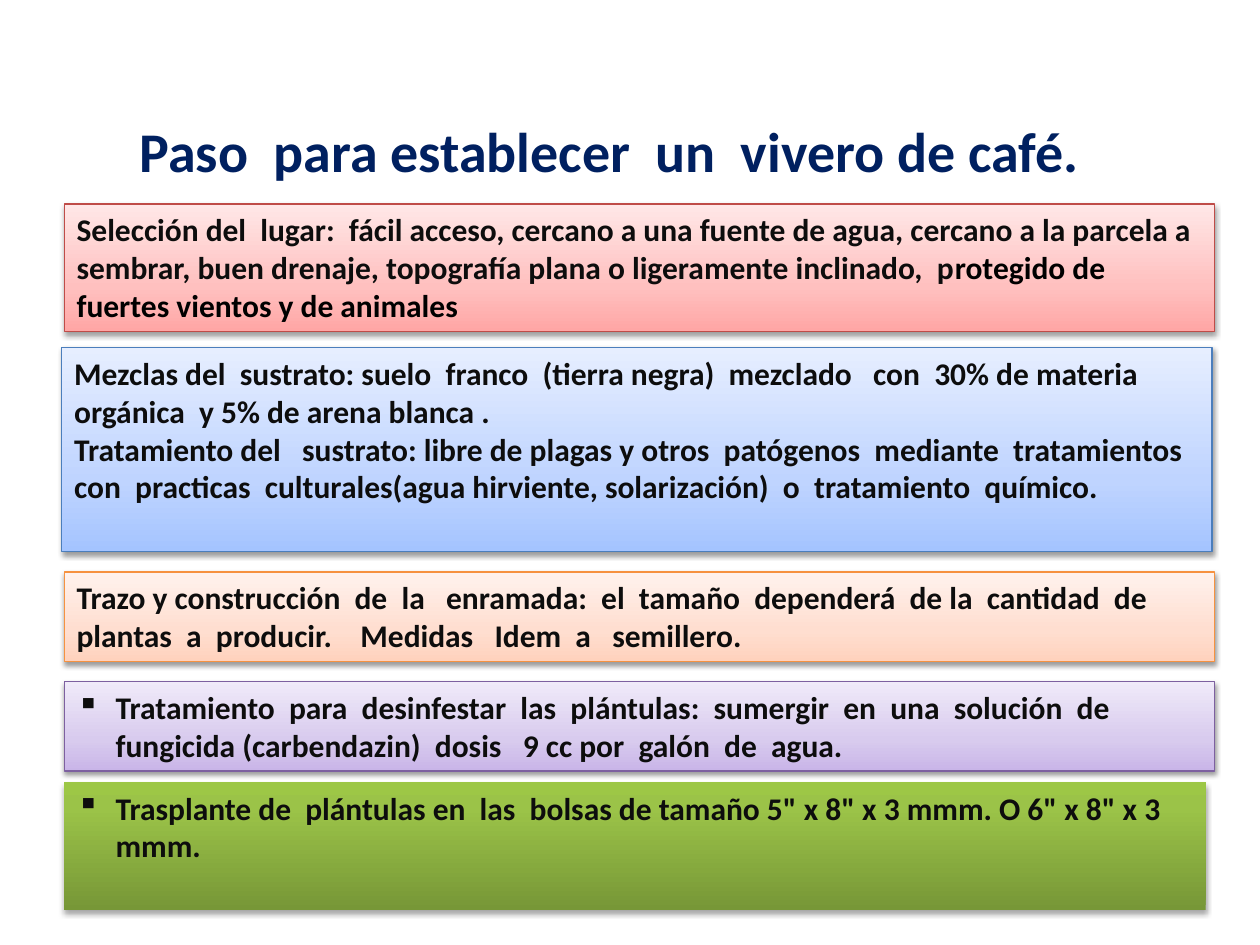
from dataclasses import dataclass

from lxml.etree import SubElement
from pptx import Presentation
from pptx.dml.color import RGBColor
from pptx.enum.shapes import MSO_SHAPE as Preset
from pptx.enum.text import MSO_ANCHOR as Anchor, MSO_AUTO_SIZE as AutoSize, PP_ALIGN as Align
from pptx.oxml.ns import qn
from pptx.util import Emu, Inches, Pt

WIDTH, HEIGHT = Inches(10), Inches(7.5)
COLUMN, ROW = WIDTH / 100, HEIGHT / 75
FONT = "Calibri"
TEXT_COLOUR = "0D0D0D"
INDENT = Inches(0.31)


@dataclass(frozen=True)
class Step:
    top: float
    rows: float
    stops: tuple[tuple[int, str], ...]
    paragraphs: tuple[str, ...]
    border: str = ""
    left: float = 5.1
    columns: float = 91.3
    bulleted: bool = False
    black_ending: str = ""
    shadow_alpha: int = 38
    shadow_distance: float = 1.6


def tint(dark: str, middle: str, light: str) -> tuple[tuple[int, str], ...]:
    return (0, dark), (35, middle), (100, light)


STEPS = (
    Step(16.2, 10.1, tint("FFA6A5", "FFC0BF", "FFE7E7"),
         ("Selección del  lugar:  fácil acceso, cercano a una fuente de agua, cercano a la parcela a "
          "sembrar, buen drenaje, topografía plana o ligeramente inclinado,  p",),
         border="BF4C48", black_ending="rotegido de fuertes vientos y de animales"),
    Step(27.6, 16.2, tint("A4C4FF", "BFD4FF", "E6EEFF"),
         ("Mezclas del  sustrato: suelo  franco  (tierra negra)  mezclado   con  30% de materia  "
          "orgánica  y 5% de arena blanca .",
          "Tratamiento del   sustrato: libre de plagas y otros  patógenos  mediante  tratamientos "
          "con  practicas  culturales(agua hirviente, solarización)  o  tratamiento  químico."),
         border="4B7EBC", left=4.9),
    Step(45.4, 7.1, tint("FFD2BD", "FFDED0", "FFF2ED"),
         ("Trazo y construcción  de  la   enramada:  el  tamaño  dependerá  de la  cantidad  de  "
          "plantas  a  producir.    Medidas   Idem  a   semillero.",),
         border="F69240"),
    Step(54.1, 7.1, tint("C9B5E8", "D8CBEE", "F0EAF9"),
         ("Tratamiento  para  desinfestar  las  plántulas:  sumergir  en  una  solución  de "
          "fungicida (carbendazin)  dosis   9 cc por  galón  de  agua.",),
         border="7D60A0", bulleted=True),
    Step(62.1, 10.1, ((0, "779737"), (80, "9BC348"), (100, "9DC746")),
         ('Trasplante de  plántulas en  las  bolsas de tamaño 5" x 8" x 3 mmm. O 6" x 8" x 3 mmm.',),
         columns=90.6, bulleted=True, shadow_alpha=35, shadow_distance=1.8),
)


def colour(value: str) -> RGBColor:
    return RGBColor.from_string(value)


def style(font, size: int, value: str) -> None:
    font.name, font.size, font.bold = FONT, Pt(size), True
    font.color.rgb = colour(value)


def place(shape, left: float, top: float, columns: float, rows: float) -> None:
    shape.left, shape.top = Emu(round(left * COLUMN)), Emu(round(top * ROW))
    shape.width, shape.height = Emu(round(columns * COLUMN)), Emu(round(rows * ROW))


def paint_gradient(shape, stops: tuple[tuple[int, str], ...]) -> None:
    shape.fill.gradient()
    shape.fill.gradient_angle = 90
    stop_list = next(shape._element.spPr.iter(qn("a:gsLst")))
    for default_stop in list(stop_list):
        stop_list.remove(default_stop)
    for position, value in stops:
        stop = SubElement(stop_list, qn("a:gs"), pos=str(position * 1000))
        SubElement(stop, qn("a:srgbClr"), val=value)


def cast_shadow(shape, alpha: int, distance: float) -> None:
    shape.shadow.inherit = False
    effects = shape._element.spPr.find(qn("a:effectLst"))
    shadow = SubElement(effects, qn("a:outerShdw"), blurRad=str(Pt(3.1)),
                        dist=str(Pt(distance)), dir="5400000", rotWithShape="0")
    black = SubElement(shadow, qn("a:srgbClr"), val="000000")
    SubElement(black, qn("a:alpha"), val=str(alpha * 1000))


def add_bullet(paragraph) -> None:
    properties = paragraph._p.get_or_add_pPr()
    properties.set("marL", str(INDENT))
    properties.set("indent", str(-INDENT))
    SubElement(properties, qn("a:buChar"), char="▪")


def write_step(frame, step: Step) -> None:
    frame.word_wrap = True
    frame.auto_size = AutoSize.NONE
    frame.vertical_anchor = Anchor.TOP
    frame.text = "\n".join(step.paragraphs)
    for paragraph in frame.paragraphs:
        paragraph.alignment = Align.LEFT
        if step.bulleted:
            add_bullet(paragraph)
        style(paragraph.runs[0].font, 18, TEXT_COLOUR)
    if step.black_ending:
        ending = frame.paragraphs[-1].add_run()
        ending.text = step.black_ending
        style(ending.font, 18, "000000")


def draw_step(slide, step: Step) -> None:
    panel = slide.shapes.add_shape(Preset.RECTANGLE, 0, 0, 0, 0)
    place(panel, step.left, step.top, step.columns, step.rows)
    paint_gradient(panel, step.stops)
    if step.border:
        panel.line.color.rgb = colour(step.border)
        panel.line.width = Pt(0.75)
    else:
        panel.line.fill.background()
    cast_shadow(panel, step.shadow_alpha, step.shadow_distance)
    write_step(panel.text_frame, step)


def write_title(title) -> None:
    place(title, 5.1, 8.4, 86.6, 7.1)
    title.text_frame.text = "Paso  para establecer  un  vivero de café."
    title.text_frame.vertical_anchor = Anchor.MIDDLE
    heading = title.text_frame.paragraphs[0]
    heading.alignment = Align.CENTER
    style(heading.runs[0].font, 32, "002060")


def main() -> None:
    deck = Presentation()
    deck.slide_width, deck.slide_height = WIDTH, HEIGHT
    slide = deck.slides.add_slide(deck.slide_layouts[5])
    write_title(slide.shapes.title)
    for step in STEPS:
        draw_step(slide, step)
    deck.save("out.pptx")


if __name__ == "__main__":
    main()
